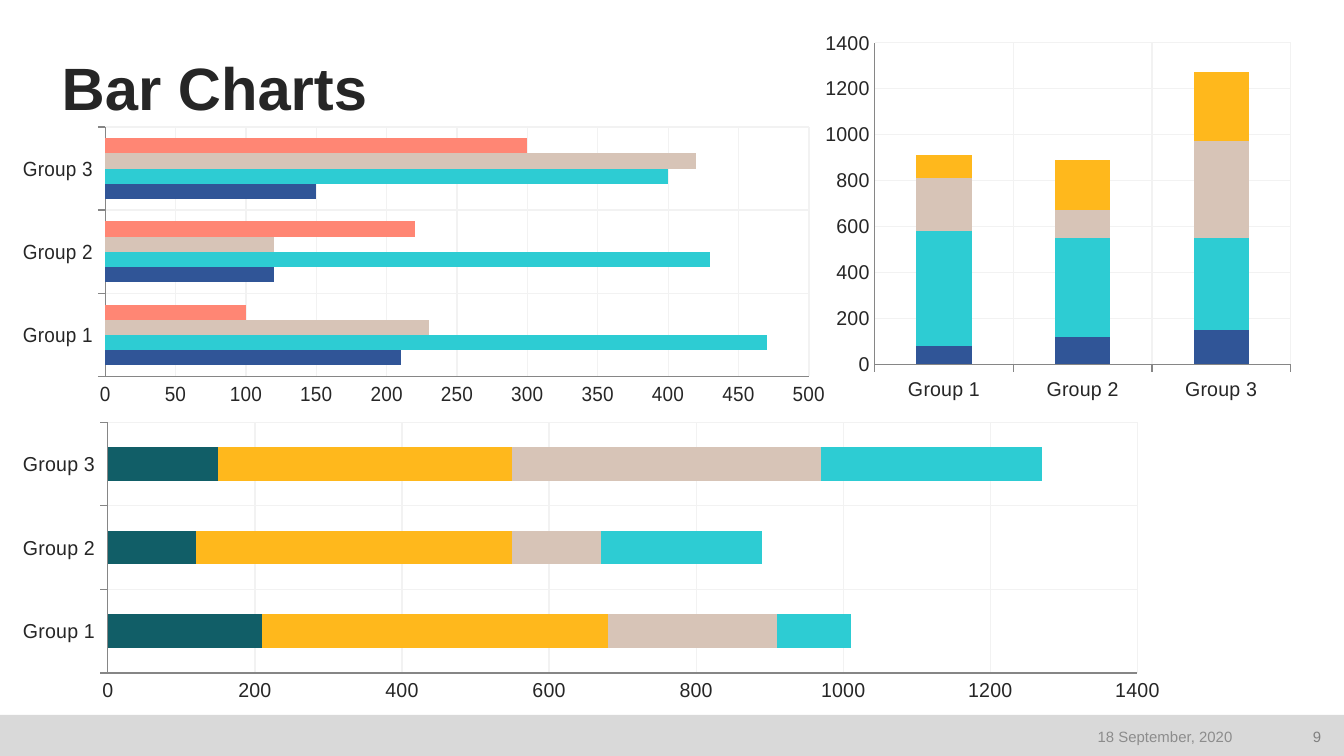
from dataclasses import dataclass

from lxml import etree
from pptx import Presentation
from pptx.chart.data import CategoryChartData
from pptx.dml.color import RGBColor
from pptx.enum import chart as ch, shapes, text
from pptx.util import Inches, Pt


@dataclass(frozen=True)
class Theme:
    font: str = "Arial"
    ink: str = "262626"
    band: str = "D9D9D9"
    grid: str = "F2F2F2"
    axis: str = "868686"
    date: str = "8C8C8C"
    page: str = "808080"
    blue: str = "305597"
    aqua: str = "2DCCD3"
    sand: str = "D7C4B7"
    gold: str = "FFB81C"
    coral: str = "FF8674"
    teal: str = "115E67"
    title: int = 32
    label: int = 11
    small: int = 8


THEME = Theme()
WIDE, HIGH = Inches(10), Inches(10) * 9 // 16
GROUPS = ["Group 1", "Group 2", "Group 3"]
BARS = [[210, 120, 150], [470, 430, 400], [230, 120, 420], [100, 220, 300]]
COLS = [[80, 120, 150], [500, 430, 400]] + BARS[2:]


def rgb(code):
    return RGBColor.from_string(code)


def style(font, size, color, bold=False):
    font.name = THEME.font
    font.size = Pt(size)
    font.bold = bold
    font.color.rgb = rgb(color)


def add_text(slide, box, words, size, color, bold=False,
             align=text.PP_ALIGN.LEFT, anchor=text.MSO_ANCHOR.MIDDLE, inset=None):
    frame = slide.shapes.add_textbox(*map(Inches, box)).text_frame
    frame.word_wrap = True
    frame.vertical_anchor = anchor
    if inset is not None:
        frame.margin_left = frame.margin_right = Inches(inset)
        frame.margin_top = frame.margin_bottom = Inches(inset)
    para = frame.paragraphs[0]
    para.alignment = align
    run = para.add_run()
    run.text = words
    style(run.font, size, color, bold)
    return para


def add_band(slide):
    """Draw the footer strip down to the bottom edge."""
    top = Inches(5.32)
    band = slide.shapes.add_shape(shapes.MSO_SHAPE.RECTANGLE, 0, top, WIDE, HIGH - top)
    band.shadow.inherit = False
    band.fill.solid()
    band.fill.fore_color.rgb = rgb(THEME.band)
    band.line.fill.background()


def set_axis(axis, tick):
    axis.major_tick_mark = tick
    axis.minor_tick_mark = ch.XL_TICK_MARK.NONE
    axis.has_major_gridlines = True
    grid = axis.major_gridlines.format.line
    grid.width = Pt(0.75)
    grid.color.rgb = rgb(THEME.grid)
    axis.format.line.color.rgb = rgb(THEME.axis)
    style(axis.tick_labels.font, THEME.label, THEME.ink)


def set_plot(chart, area):
    """Fix the inner plot area, given as shares of the chart box."""
    plot = chart.plots[0]._element.getparent()
    space = plot.nsmap["c"]

    def add(parent, tag, value):
        etree.SubElement(parent, f"{{{space}}}{tag}").set("val", str(value))

    for old in plot.findall(f"{{{space}}}layout"):
        plot.remove(old)
    layout = etree.Element(f"{{{space}}}layout")
    plot.insert(0, layout)
    manual = etree.SubElement(layout, f"{{{space}}}manualLayout")
    add(manual, "layoutTarget", "inner")
    for key in "xy":
        add(manual, key + "Mode", "edge")
    for key, part in zip("xywh", area):
        add(manual, key, part)


def add_chart(slide, kind, box, area, rows, colors, top, step):
    data = CategoryChartData()
    data.categories = GROUPS
    for num, row in enumerate(rows, 1):
        data.add_series(f"Series {num}", row)
    chart = slide.shapes.add_chart(kind, *map(Inches, box), data).chart
    chart.has_legend = False
    chart.has_title = False
    style(chart.font, THEME.label, THEME.ink)
    plot = chart.plots[0]
    plot.vary_by_categories = False
    plot.gap_width = 150
    plot.overlap = 0 if kind == ch.XL_CHART_TYPE.BAR_CLUSTERED else 100
    for series, color in zip(plot.series, colors):
        series.format.fill.solid()
        series.format.fill.fore_color.rgb = rgb(color)
    set_axis(chart.category_axis, ch.XL_TICK_MARK.OUTSIDE)
    set_axis(chart.value_axis, ch.XL_TICK_MARK.NONE)
    scale = chart.value_axis
    scale.minimum_scale, scale.maximum_scale, scale.major_unit = 0, top, step
    set_plot(chart, area)


def main():
    deck = Presentation()
    deck.slide_width, deck.slide_height = WIDE, HIGH
    slide = deck.slides.add_slide(deck.slide_layouts[6])
    t = THEME
    kinds = ch.XL_CHART_TYPE

    add_band(slide)
    title = add_text(slide, (0.46, 0.4, 9.1, 0.52), "Bar Charts", t.title, t.ink,
                     bold=True, anchor=text.MSO_ANCHOR.BOTTOM, inset=0)
    title.line_spacing = 0.9

    add_chart(slide, kinds.COLUMN_STACKED, (6.14, 0.23, 3.53, 2.75),
              (0.06, 0.02, 0.92, 0.89), COLS,
              (t.blue, t.aqua, t.sand, t.gold), 1400, 200)
    add_chart(slide, kinds.BAR_CLUSTERED, (0.17, 0.94, 5.97, 2.09),
              (0.11, 0, 0.95, 0.89), BARS,
              (t.blue, t.aqua, t.sand, t.coral), 500, 50)
    add_chart(slide, kinds.BAR_STACKED, (0.17, 3.08, 8.46, 2.14),
              (0.05, 0.03, 0.95, 0.89), BARS,
              (t.teal, t.gold, t.sand, t.aqua), 1400, 200)

    for left, width, words, color in ((7.02, 2.25, "18 September, 2020", t.date),
                                      (9.56, 0.37, "9", t.page)):
        add_text(slide, (left, 5.35, width, 0.26), words, t.small, color,
                 align=text.PP_ALIGN.RIGHT)
    deck.save("out.pptx")


if __name__ == "__main__":
    main()
